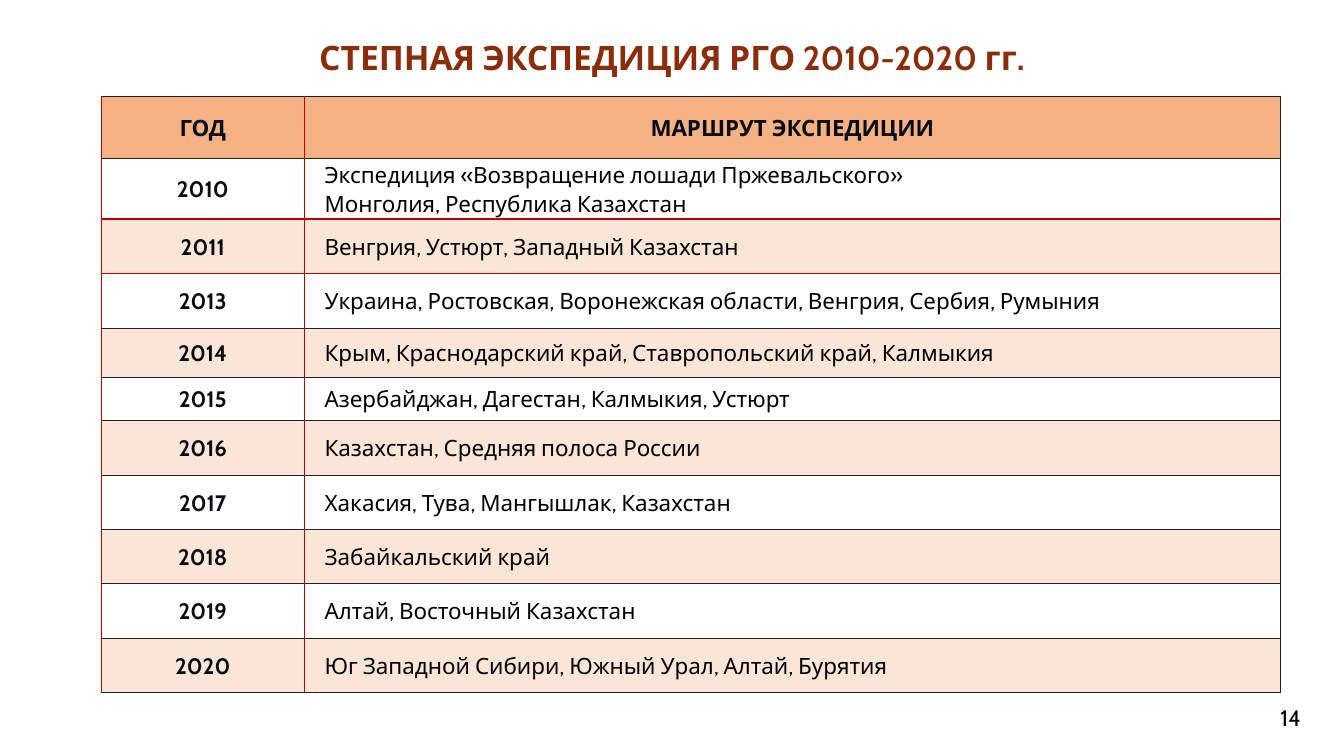
from dataclasses import dataclass

from lxml.etree import SubElement
from pptx import Presentation
from pptx.dml.color import RGBColor
from pptx.enum.text import MSO_ANCHOR, PP_ALIGN
from pptx.oxml.ns import qn
from pptx.slide import Slide
from pptx.table import Table, _Cell
from pptx.text.text import TextFrame
from pptx.util import Cm, Pt


@dataclass(frozen=True)
class Theme:
    font: str = "Cabin"
    title_size: int = 24
    body_size: int = 16
    title: str = "8B2C0A"
    year: str = "060B14"
    text: str = "000000"
    header_fill: str = "F4B183"
    band_fill: str = "FBE5D6"
    plain_fill: str = "FFFFFF"
    red_line: str = "C00000"
    dark_line: str = "202020"


@dataclass(frozen=True)
class TextStyle:
    size: int
    color: str
    bold: bool = False
    centered: bool = True
    spacing: float = 1.0
    indent: float = 0


@dataclass(frozen=True)
class Label:
    text: str
    left: float
    top: float
    width: float
    height: float
    style: TextStyle


@dataclass(frozen=True)
class Expedition:
    year: str
    route: str
    height: float = 1.37


THEME = Theme()
HEADING = TextStyle(THEME.body_size, THEME.year, bold=True, spacing=1.07)
ROUTE = TextStyle(THEME.body_size, THEME.text, centered=False, spacing=1.07, indent=0.33)

LABELS = [
    Label("СТЕПНАЯ ЭКСПЕДИЦИЯ РГО 2010-2020 гг.", 0, 0.91, 33.87, 1.17,
          TextStyle(THEME.title_size, THEME.title, bold=True, spacing=0.9)),
    Label("14", 31.19, 17.63, 2.67, 0.94, TextStyle(THEME.body_size, THEME.text)),
]

ROWS = [
    Expedition("ГОД", "МАРШРУТ ЭКСПЕДИЦИИ", 1.57),
    Expedition("2010", "Экспедиция «Возвращение лошади Пржевальского»\nМонголия, Республика Казахстан", 1.53),
    Expedition("2011", "Венгрия, Устюрт, Западный Казахстан"),
    Expedition("2013", "Украина, Ростовская, Воронежская области, Венгрия, Сербия, Румыния", 1.39),
    Expedition("2014", "Крым, Краснодарский край, Ставропольский край, Калмыкия", 1.22),
    Expedition("2015", "Азербайджан, Дагестан, Калмыкия, Устюрт", 1.1),
    Expedition("2016", "Казахстан, Средняя полоса России"),
    Expedition("2017", "Хакасия, Тува, Мангышлак, Казахстан"),
    Expedition("2018", "Забайкальский край"),
    Expedition("2019", "Алтай, Восточный Казахстан"),
    Expedition("2020", "Юг Западной Сибири, Южный Урал, Алтай, Бурятия"),
]
COLUMN_WIDTHS = (5.12, 24.6)
RED_VERTICALS = (0, 1)
RED_HORIZONTALS = (2, 3)


def write(frame: TextFrame, text: str, style: TextStyle) -> None:
    """Put styled text into a frame."""
    frame.text = text
    for para in frame.paragraphs:
        para.alignment = PP_ALIGN.CENTER if style.centered else PP_ALIGN.LEFT
        para.line_spacing = style.spacing
        if style.indent:
            properties = para._p.get_or_add_pPr()
            properties.set("marL", str(Cm(style.indent)))
            properties.set("indent", "0")
        for span in para.runs:
            span.font.name = THEME.font
            span.font.size = Pt(style.size)
            span.font.bold = style.bold
            span.font.color.rgb = RGBColor.from_string(style.color)


def add_label(page: Slide, label: Label) -> None:
    """Add a text box to the page."""
    box = page.shapes.add_textbox(Cm(label.left), Cm(label.top), Cm(label.width), Cm(label.height))
    box.text_frame.word_wrap = True
    write(box.text_frame, label.text, label.style)


def add_border(cell: _Cell, side: str, red: bool) -> None:
    """Draw one side of a cell."""
    line = SubElement(cell._tc.get_or_add_tcPr(), qn(f"a:{side}"), w=str(Pt(1 if red else 0.5)))
    fill = SubElement(line, qn("a:solidFill"))
    SubElement(fill, qn("a:srgbClr"), val=THEME.red_line if red else THEME.dark_line)


def fill_cell(table: Table, row: int, column: int, text: str) -> None:
    """Write and decorate one table cell."""
    cell = table.cell(row, column)
    write(cell.text_frame, text, HEADING if row == 0 or column == 0 else ROUTE)
    cell.vertical_anchor = MSO_ANCHOR.MIDDLE
    cell.margin_left = cell.margin_right = Cm(0.18)
    cell.margin_top = cell.margin_bottom = Cm(0)
    for side, offset in (("lnL", 0), ("lnR", 1)):
        add_border(cell, side, column + offset in RED_VERTICALS)
    for side, offset in (("lnT", 0), ("lnB", 1)):
        add_border(cell, side, row + offset in RED_HORIZONTALS)
    band = THEME.plain_fill if row % 2 else THEME.band_fill
    cell.fill.solid()
    cell.fill.fore_color.rgb = RGBColor.from_string(band if row else THEME.header_fill)


def add_expeditions(page: Slide) -> None:
    """Add the table of years and routes."""
    height = sum(expedition.height for expedition in ROWS)
    frame = page.shapes.add_table(len(ROWS), len(COLUMN_WIDTHS), Cm(2.55), Cm(2.42),
                                  Cm(sum(COLUMN_WIDTHS)), Cm(height))
    table = frame.table
    table.first_row = table.horz_banding = False
    for column, width in zip(table.columns, COLUMN_WIDTHS):
        column.width = Cm(width)
    for row, expedition in enumerate(ROWS):
        table.rows[row].height = Cm(expedition.height)
        for column, text in enumerate((expedition.year, expedition.route)):
            fill_cell(table, row, column, text)


def main() -> None:
    """Build and save the slide."""
    deck = Presentation()
    deck.slide_width, deck.slide_height = Cm(33.87), Cm(19.05)
    page = deck.slides.add_slide(deck.slide_layouts[6])
    add_expeditions(page)
    for label in LABELS:
        add_label(page, label)
    deck.save("out.pptx")


if __name__ == "__main__":
    main()
